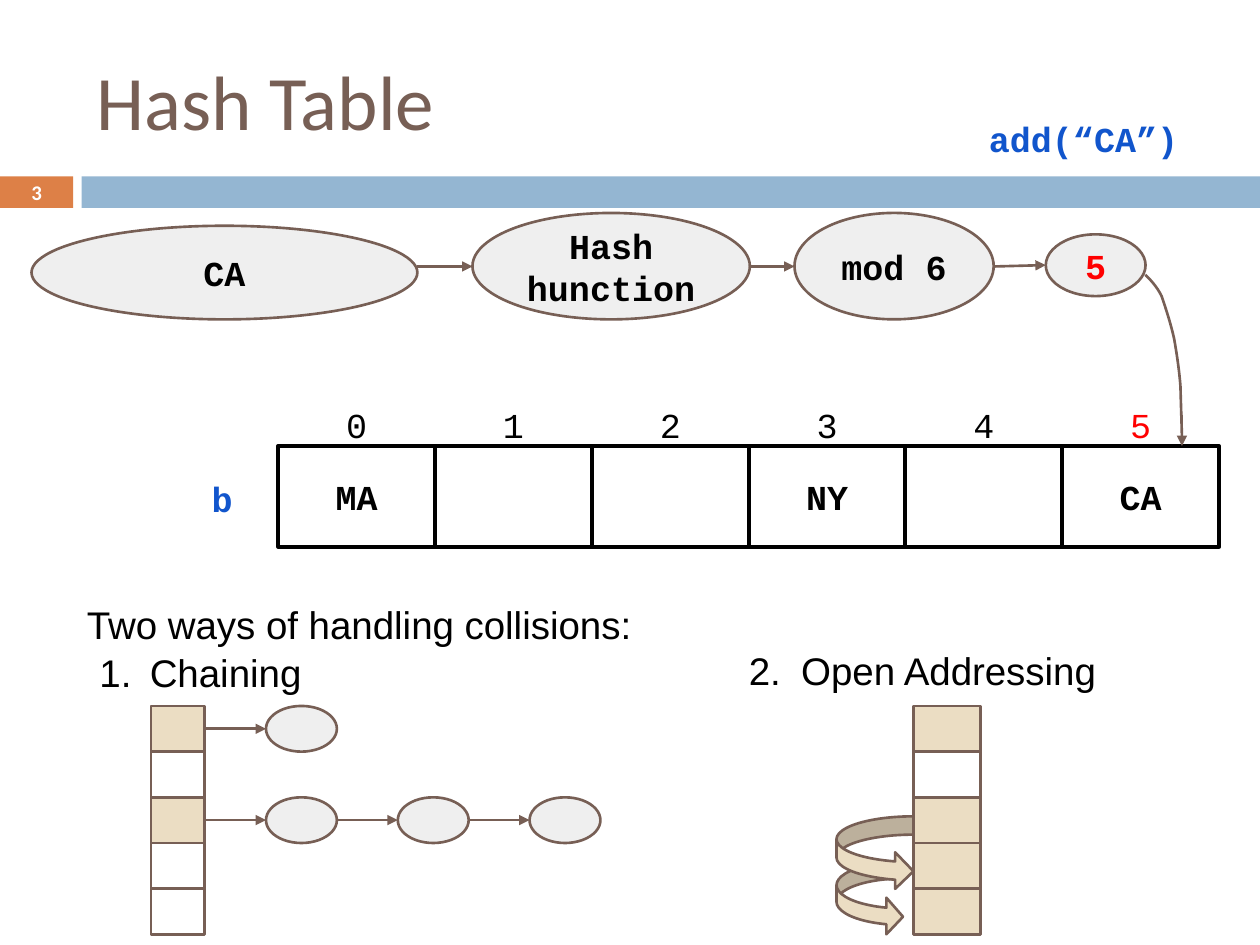
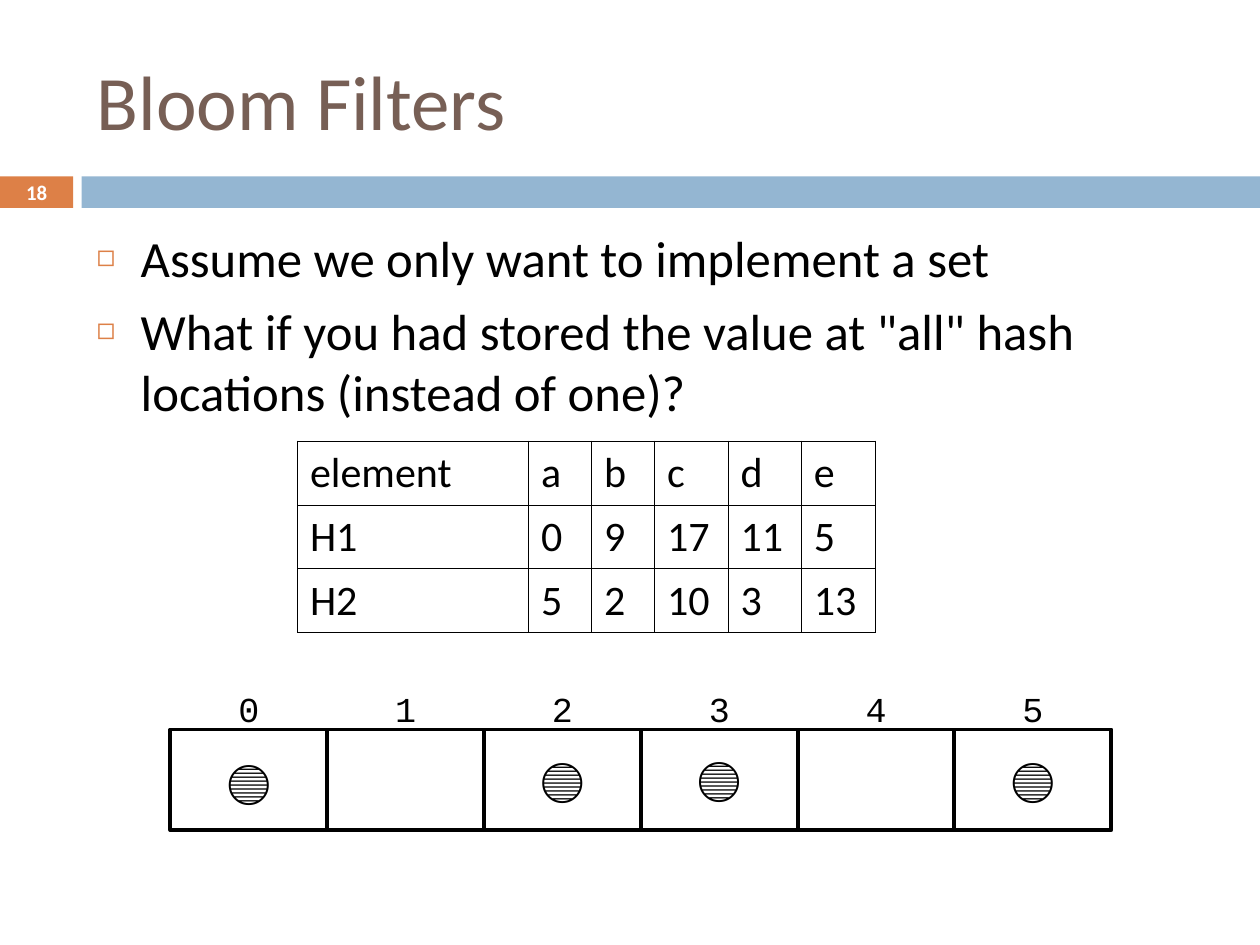
"""Builds two lecture slides on hash tables and Bloom filters."""
from lxml.etree import SubElement
from pptx import Presentation
from pptx.dml.color import RGBColor
from pptx.enum.shapes import MSO_CONNECTOR, MSO_SHAPE
from pptx.enum.text import MSO_ANCHOR, MSO_AUTO_SIZE, PP_ALIGN
from pptx.oxml import parse_xml
from pptx.oxml.ns import nsdecls, qn
from pptx.util import Pt

COLORS = {
    "brown": "775F55", "orange": "DD8047", "blue": "94B6D2", "sand": "EBDDC3",
    "gray": "EFEFEF", "white": "FFFFFF", "black": "000000", "red": "FF0000",
    "code": "1155CC",
}
RGB = {name: RGBColor.from_string(value) for name, value in COLORS.items()}
CELL_WIDTH, CELL_HEIGHT = 89.6, 57.6
SLOT_HEIGHT = 26.1


def add_box(slide, kind, left, top, width, height, fill=None, line=None, weight=1.5,
            text="", color="black", size=20, font="Courier New", bold=True,
            align=PP_ALIGN.CENTER, anchor=MSO_ANCHOR.MIDDLE):
    shape = slide.shapes.add_shape(kind, Pt(left), Pt(top), Pt(width), Pt(height))
    shape.shadow.inherit = False
    if fill:
        shape.fill.solid()
        shape.fill.fore_color.rgb = RGB[fill]
    else:
        shape.fill.background()
    if line:
        shape.line.color.rgb = RGB[line]
        shape.line.width = Pt(weight)
    else:
        shape.line.fill.background()
    frame = shape.text_frame
    frame.word_wrap = True
    frame.vertical_anchor = anchor
    frame.margin_left = frame.margin_right = frame.margin_top = frame.margin_bottom = Pt(7.2)
    frame.text = text
    for paragraph in frame.paragraphs:
        paragraph.alignment = align
        for run in paragraph.runs:
            run.font.name = font
            run.font.size = Pt(size)
            run.font.bold = bold
            run.font.color.rgb = RGB[color]
    return shape


def add_arrow(slide, start, end, source=None):
    arrow = slide.shapes.add_connector(
        MSO_CONNECTOR.STRAIGHT, *[Pt(value) for value in (*start, *end)])
    if source:
        arrow.begin_connect(source, 3)
    arrow.line.color.rgb = RGB["brown"]
    arrow.line.width = Pt(1.5)
    properties = arrow.element.spPr
    SubElement(properties.find(qn("a:ln")), qn("a:tailEnd"), type="triangle")
    SubElement(properties, qn("a:effectLst"))


presentation = Presentation()
presentation.slide_width, presentation.slide_height = Pt(720), Pt(540)
slides = []
arrays = [
    ("Hash Table", "3", 5, 159, 254.9, {0: "MA", 3: "NY", 5: "CA"}, {5: "red"}),
    ("Bloom Filters", "18", 1, 97.4, 416.9, {}, {}),
]
for title, number, layout, array_left, array_top, values, index_colors in arrays:
    slide = presentation.slides.add_slide(presentation.slide_layouts[layout])
    slides.append(slide)
    add_box(slide, MSO_SHAPE.RECTANGLE, 0, 100.8, 41.8, 18, "orange",
            text=number, color="white", size=11.9, font="Calibri")
    add_box(slide, MSO_SHAPE.RECTANGLE, 46.6, 100.8, 673.4, 18, "blue")

    heading = slide.shapes.title
    heading.left, heading.top, heading.width, heading.height = Pt(48), Pt(18), Pt(642), Pt(78)
    heading.text_frame.text = title
    heading.text_frame.auto_size = MSO_AUTO_SIZE.NONE
    heading.text_frame.vertical_anchor = MSO_ANCHOR.MIDDLE
    paragraph = heading.text_frame.paragraphs[0]
    paragraph.alignment = PP_ALIGN.LEFT
    paragraph.runs[0].font.name = "Calibri"
    paragraph.runs[0].font.size = Pt(44)
    paragraph.runs[0].font.color.rgb = RGB["brown"]

    for index in range(6):
        cell_left = array_left + index * CELL_WIDTH
        add_box(slide, MSO_SHAPE.RECTANGLE, cell_left, array_top, CELL_WIDTH, CELL_HEIGHT,
                line="black", weight=2.25, text=values.get(index, ""))
        add_box(slide, MSO_SHAPE.RECTANGLE, cell_left, array_top - 21.3, CELL_WIDTH, 18,
                text=str(index), color=index_colors.get(index, "black"), bold=False)

hash_slide, bloom_slide = slides

for left, top, width, height, text, color in [
    (18, 129, 220.5, 53.5, "CA", "black"),
    (270, 121.7, 158.5, 60.8, "Hash hunction", "black"),
    (454, 121.7, 113.8, 60.8, "mod 6", "black"),
    (597.6, 133.9, 57, 35.3, "5", "red"),
]:
    add_box(hash_slide, MSO_SHAPE.OVAL, left, top, width, height, "gray", "brown",
            text=text, color=color)
for start, end in [
    ((238.5, 152.3), (270, 152.3)),
    ((428.5, 152.3), (454, 152.3)),
    ((567.8, 152.3), (597.6, 151.5)),
    ((675.4, 236.9), (675.4, 254.9)),
]:
    add_arrow(hash_slide, start, end)

curve_points = [
    (656.6, 159.1), (661, 163.4), (663.8, 169.2), (666, 175.7), (668.9, 184.3), (671, 193.7),
    (672.5, 202.3), (673.9, 211.7), (674.6, 221), (674.8, 230.4), (675.4, 246.2), (675.4, 251.3),
]
builder = hash_slide.shapes.build_freeform(Pt(654.5), Pt(157))
builder.add_line_segments([(Pt(x), Pt(y)) for x, y in curve_points], close=False)
curve = builder.convert_to_shape()
curve.shadow.inherit = False
curve.fill.background()
curve.line.color.rgb = RGB["brown"]
curve.line.width = Pt(1.5)
outline = curve.element.find(".//" + qn("a:path"))
segments = outline.findall(qn("a:lnTo"))
for first in range(0, len(segments), 3):
    bezier = SubElement(outline, qn("a:cubicBezTo"))
    for segment in segments[first:first + 3]:
        bezier.append(segment[0])
        outline.remove(segment)

for left, top, width, height, text in [
    (558, 59.8, 126, 38.9, "add(“CA”)"),
    (113.8, 265.7, 36, 38.2, "b"),
]:
    add_box(hash_slide, MSO_SHAPE.RECTANGLE, left, top, width, height, text=text,
            color="code", align=PP_ALIGN.LEFT, anchor=MSO_ANCHOR.TOP)

for left, top, width, text, first_number, indent in [
    (42.5, 336.2, 370, "Two ways of handling collisions:\nChaining", 1, 28.8),
    (420.8, 362.5, 260, "Open Addressing", 2, 30),
]:
    box = add_box(hash_slide, MSO_SHAPE.RECTANGLE, left, top, width, 40, text=text, size=22,
                  font="Arial", bold=False, align=PP_ALIGN.LEFT, anchor=MSO_ANCHOR.TOP)
    paragraph = box.text_frame.paragraphs[-1]
    paragraph.space_before = Pt(1)
    properties = paragraph.runs[0].font._element.getparent().getparent().get_or_add_pPr()
    properties.set("marL", str(Pt(36 if first_number == 1 else indent)))
    properties.set("indent", str(Pt(-indent)))
    SubElement(properties, qn("a:buAutoNum"), type="arabicPeriod", startAt=str(first_number))

for top, width, bend in [(492.5, 38, 0.574), (466.5, 44, 0.5)]:
    probe = add_box(hash_slide, MSO_SHAPE.CURVED_RIGHT_ARROW, 478, top, width, 41.8,
                    "sand", "brown")
    probe.adjustments[1] = bend

slots_top = 403.4
for left, width, filled, node_counts in [
    (86.2, 30.7, {0, 2}, {0: 1, 2: 3}),
    (522, 38.3, {0, 2, 3, 4}, {}),
]:
    for row in range(5):
        top = slots_top + row * SLOT_HEIGHT
        middle = top + SLOT_HEIGHT / 2
        slot = add_box(hash_slide, MSO_SHAPE.RECTANGLE, left, top, width, SLOT_HEIGHT,
                       "sand" if row in filled else "white", "brown")
        for node in range(node_counts.get(row, 0)):
            node_left = 152 + node * 75.3
            add_box(hash_slide, MSO_SHAPE.OVAL, node_left, top, 40.5, SLOT_HEIGHT,
                    "gray", "brown")
            add_arrow(hash_slide, (node_left - 34.8, middle), (node_left, middle),
                      None if node else slot)

body = bloom_slide.placeholders[1]
body.left, body.top, body.width, body.height = Pt(48), Pt(126), Pt(642), Pt(354)
body.text_frame.text = (
    "Assume we only want to implement a set\n"
    'What if you had stored the value at "all" hash locations (instead of one)?')
body.text_frame.auto_size = MSO_AUTO_SIZE.NONE
for paragraph in body.text_frame.paragraphs:
    paragraph.space_before = Pt(7)
    paragraph.runs[0].font.name = "Calibri"
    paragraph.runs[0].font.size = Pt(29)
    paragraph.runs[0].font.color.rgb = RGB["black"]
    properties = paragraph._p.get_or_add_pPr()
    properties.set("marL", str(Pt(25.2)))
    properties.set("indent", str(Pt(-25.2)))
    bullet_color = SubElement(properties, qn("a:buClr"))
    SubElement(bullet_color, qn("a:srgbClr"), val=COLORS["orange"])
    SubElement(properties, qn("a:buSzPct"), val="60000")
    SubElement(properties, qn("a:buChar"), char="◻")

hash_rows = [
    ["element", "a", "b", "c", "d", "e"],
    ["H1", "0", "9", "17", "11", "5"],
    ["H2", "5", "2", "10", "3", "13"],
]
table = bloom_slide.shapes.add_table(3, 6, Pt(170), Pt(252), Pt(330), Pt(108)).table
table.first_row = table.horz_banding = False
for column, width in zip(table.columns, [132, 36, 36, 42, 42, 42]):
    column.width = Pt(width)
for row, texts in enumerate(hash_rows):
    for column, text in enumerate(texts):
        cell = table.cell(row, column)
        cell.text = text
        cell.vertical_anchor = MSO_ANCHOR.MIDDLE
        cell.fill.background()
        font = cell.text_frame.paragraphs[0].runs[0].font
        font.name, font.size, font.color.rgb = "Calibri", Pt(24), RGB["black"]
        properties = cell._tc.get_or_add_tcPr()
        for position, side in enumerate("LRTB"):
            properties.insert(position, parse_xml(
                f'<a:ln{side} {nsdecls("a")} w="{Pt(0.4)}"><a:solidFill>'
                f'<a:srgbClr val="{COLORS["black"]}"/></a:solidFill></a:ln{side}>'))

for index, top in {0: 428.4, 2: 427, 3: 426.2, 5: 427}.items():
    add_box(bloom_slide, MSO_SHAPE.RECTANGLE, 105.5 + index * CELL_WIDTH, top, 73.4, 36,
            text="🔵", size=24, font="Arial", bold=False)

presentation.save("out.pptx")
